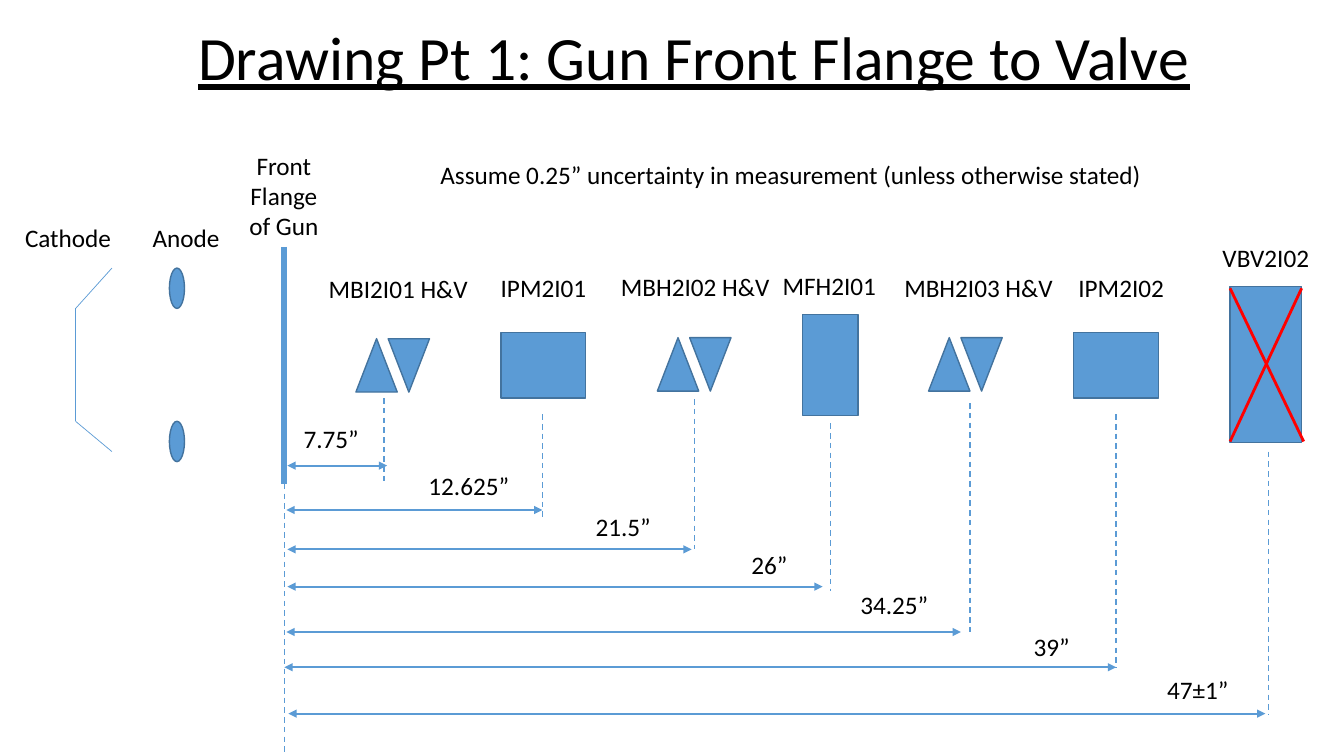
import pptx
import pptx.util
import pptx.dml.color
import pptx.enum.dml
import pptx.enum.shapes
import pptx.enum.text
import pptx.oxml.ns
import lxml.etree

PX = 9144
COLORS = {"fill": "5B9BD5", "edge": "43739E", "cross": "FF0000", "text": "000000"}
FONT = "Calibri"
KIND = pptx.enum.shapes.MSO_SHAPE
ALIGN = pptx.enum.text.PP_ALIGN

TITLE = ("Drawing Pt 1: Gun Front Flange to Valve", 135, 5, 1107, 111)
NOTE = ("Assume 0.25” uncertainty in measurement (unless otherwise stated)", 427, 153, 740)
CATHODE = ("Cathode", 15, 216, 127)
LABELS = [
    ("Anode", 137, 216, 95),
    ("Front Flange of Gun", 234, 144, 95, 101),
    ("MBI2I01 H&V", 311, 266, 168),
    ("IPM2I01", 483, 265, 112),
    ("MBH2I02 H&V", 595, 264, 189),
    ("MFH2I01", 763, 263, 119),
    ("MBH2I03 H&V", 880, 265, 181),
    ("IPM2I02", 1058, 265, 108),
    ("VBV2I02", 1202, 236, 107),
]
CUP = [(111, 266), (75, 306), (75, 418), (111, 448)]
ANODES = [266, 418]
FLANGE = (282, 245, 480)
MAGNETS = [(353, 336), (652, 335), (921, 335)]
BOXES = [(497, 330, 84, 65), (796, 312, 55, 100), (1065, 330, 84, 65), (1220, 284, 71, 155)]
CROSS = [(1220, 286, 1293, 438), (1291, 286, 1220, 438)]
# text, label left, label top, label width, guide x, guide top, guide end, arrow from, arrow to, arrow y
SPANS = [
    ("7.75”", 281, 415, 95, 381, 395, 480, 285, 384, 462),
    ("12.625”", 409, 462, 112, 538, 411, 515, 284, 538, 506),
    ("21.5”", 562, 502, 112, 689, 396, 545, 285, 686, 545),
    ("26”", 707, 540, 112, 824, 420, 586, 285, 816, 582),
    ("34.25”", 831, 580, 112, 962, 400, 627, 284, 953, 627),
    ("39”", 987, 621, 112, 1107, 411, 662, 282, 1107, 662),
    ("47±1”", 1132, 664, 112, 1258, 448, 709, 286, 1255, 708),
]

deck = pptx.Presentation()
deck.slide_width, deck.slide_height = 1333 * PX, 750 * PX
slide = deck.slides.add_slide(deck.slide_layouts[6])


def rgb(name):
    return pptx.dml.color.RGBColor.from_string(COLORS[name])


def write(text, left, top, width, height=40, *, size=18, align=ALIGN.CENTER,
          under=None, anchor=pptx.enum.text.MSO_ANCHOR.TOP, space=None):
    box = slide.shapes.add_textbox(left * PX, top * PX, width * PX, height * PX)
    frame = box.text_frame
    frame.word_wrap = True
    frame.vertical_anchor = anchor
    para = frame.paragraphs[0]
    para.alignment = align
    para.line_spacing = space
    run = para.add_run()
    run.text = text
    run.font.name = FONT
    run.font.size = pptx.util.Pt(size)
    run.font.underline = under
    run.font.color.rgb = rgb("text")


def shape(kind, left, top, width, height, turn=0):
    item = slide.shapes.add_shape(kind, left * PX, top * PX, width * PX, height * PX)
    item.shadow.inherit = False
    item.rotation = turn
    item.fill.solid()
    item.fill.fore_color.rgb = rgb("fill")
    item.line.color.rgb = rgb("edge")
    item.line.width = pptx.util.Pt(1)


def line(left, top, right, end, width=1, color="fill", dash=False, heads=False):
    item = slide.shapes.add_connector(
        pptx.enum.shapes.MSO_CONNECTOR.STRAIGHT, left * PX, top * PX, right * PX, end * PX)
    item.line.color.rgb = rgb(color)
    item.line.width = pptx.util.Pt(width)
    if dash:
        item.line.dash_style = pptx.enum.dml.MSO_LINE.DASH
    if heads:
        for tag in ("a:headEnd", "a:tailEnd"):
            lxml.etree.SubElement(item.line._get_or_add_ln(), pptx.oxml.ns.qn(tag), type="triangle")
    lxml.etree.SubElement(item._element.spPr, pptx.oxml.ns.qn("a:effectLst"))


write(*TITLE, size=44, under=True, anchor=pptx.enum.text.MSO_ANCHOR.MIDDLE, space=0.9)
write(*NOTE, align=ALIGN.LEFT)
write(*CATHODE, align=ALIGN.LEFT)
for label in LABELS:
    write(*label)

for start, stop in zip(CUP, CUP[1:]):
    line(*start, *stop, width=0.5)
for top in ANODES:
    shape(KIND.OVAL, 168, top, 15, 40)

axis, top, end = FLANGE
line(axis, top, axis, end, width=4)
line(axis, end, axis, 750, dash=True)

for left, top in MAGNETS:
    for step, turn in ((0, 0), (32, 180)):
        shape(KIND.ISOSCELES_TRIANGLE, left + step, top, 41, 53, turn)
for box in BOXES:
    shape(KIND.RECTANGLE, *box)
for stroke in CROSS:
    line(*stroke, width=2, color="cross")

for text, left, top, width, mark, high, low, start, stop, level in SPANS:
    line(mark, high, mark, low, dash=True)
    line(start, level, stop, level, width=1.5, heads=True)
    write(text, left, top, width)

deck.save("out.pptx")
